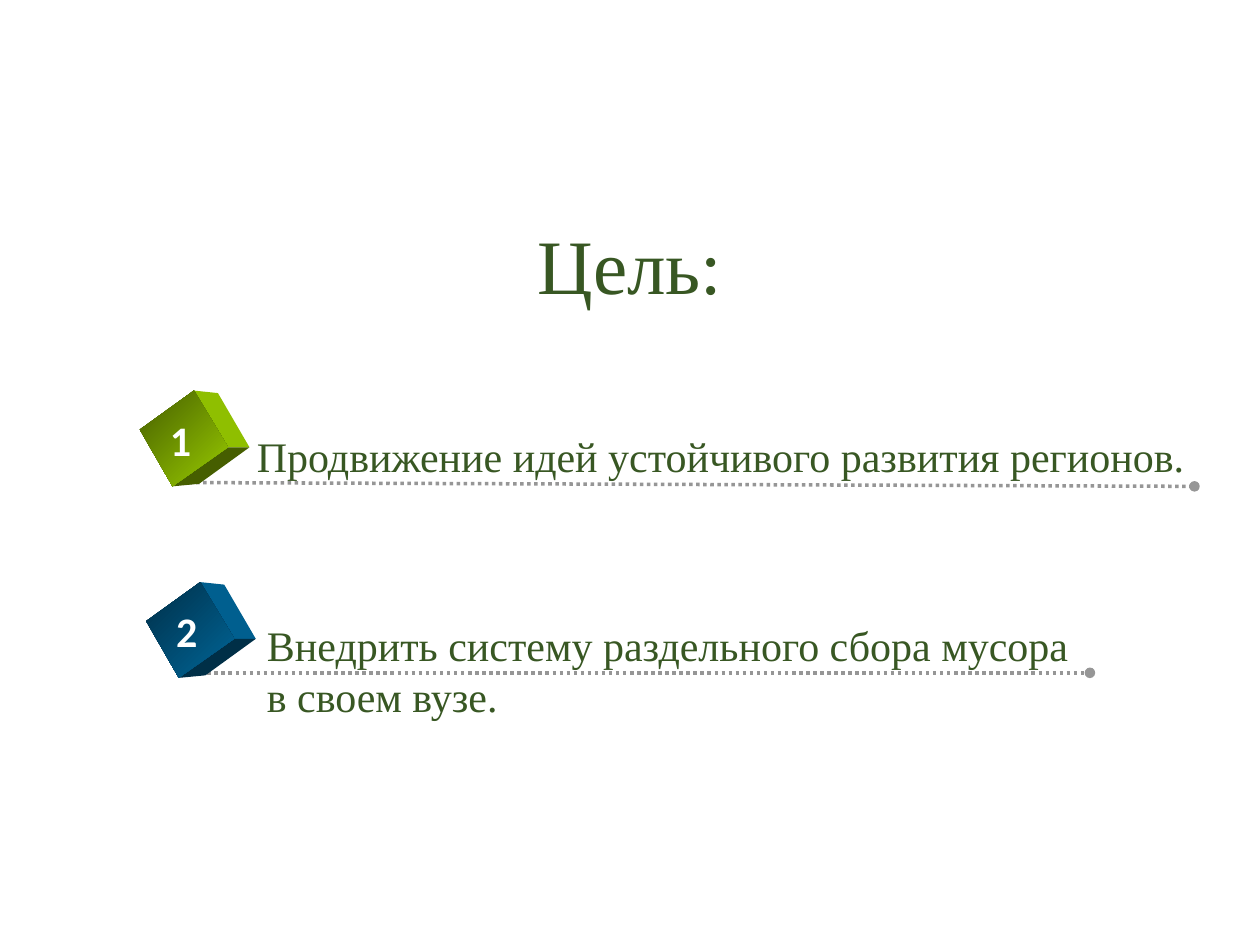
from dataclasses import dataclass

import pptx
import pptx.dml.color
import pptx.enum.dml
import pptx.enum.shapes
import pptx.enum.text
import pptx.util
from lxml import etree
from pptx.oxml.ns import qn
from pptx.util import Inches

SERIF = "Times New Roman"
GREEN = "385723"
WHITE = "FFFFFF"
GREY = "969696"

# Cube corners, relative to the top corner of the cube
TOP, LEFT, BOTTOM, RIGHT = (0.43, 0), (0, 0.31), (0.26, 0.76), (0.7, 0.45)
BACK_TOP, BACK_RIGHT, BACK_BOTTOM = (0.62, 0.02), (0.87, 0.45), (0.47, 0.74)


@dataclass
class Goal:
    number: str
    lines: list[str]
    cube: tuple[float, float]
    text_box: tuple[float, float, float, float]
    rule: tuple[float, float, float, float]
    bright: str
    side: str
    dark: str


GOALS = [
    Goal("1", ["Продвижение идей устойчивого развития регионов."],
         (1.11, 3.1), (1.94, 3.37, 7.66, 0.5), (1.5, 3.83, 9.48, 3.86),
         "99CC00", "8FBF00", "465E00"),
    Goal("2", ["Внедрить систему раздельного сбора мусора", "в своем вузе."],
         (1.16, 4.62), (2.02, 4.87, 6.71, 0.91), (1.59, 5.34, 8.65, 5.34),
         "006699", "005F8F", "002F47"),
]


def rgb(value: str) -> pptx.dml.color.RGBColor:
    return pptx.dml.color.RGBColor.from_string(value)


def add_text(s, box, lines, size, color, font=SERIF, bold=False, wrap=False):
    sp = s.shapes.add_textbox(*map(Inches, box))
    tf = sp.text_frame
    tf.word_wrap = wrap
    tf.text = "\n".join(lines)
    for p in tf.paragraphs:
        for r in p.runs:
            r.font.name = font
            r.font.size = pptx.util.Pt(size)
            r.font.bold = bold
            r.font.color.rgb = rgb(color)
    return tf


def add_rule(s, ends: tuple[float, float, float, float]) -> None:
    """Draw a dotted line that ends in a round dot."""
    line = s.shapes.add_connector(
        pptx.enum.shapes.MSO_CONNECTOR.STRAIGHT, *map(Inches, ends))
    line.line.color.rgb = rgb(GREY)
    line.line.width = pptx.util.Pt(2)
    line.line.dash_style = pptx.enum.dml.MSO_LINE.ROUND_DOT
    ln = line.line._get_or_add_ln()
    etree.SubElement(ln, qn("a:tailEnd"), type="oval")
    etree.SubElement(line._element.spPr, qn("a:effectLst"))


def add_face(s, origin, corners, color):
    x, y = origin
    points = [(Inches(x + dx), Inches(y + dy)) for dx, dy in corners]
    builder = s.shapes.build_freeform(*points[0], scale=1.0)
    builder.add_line_segments(points[1:], close=True)
    sp = builder.convert_to_shape()
    sp.shadow.inherit = False
    sp.line.fill.background()
    sp.fill.solid()
    sp.fill.fore_color.rgb = rgb(color)
    return sp


def add_cube(s, goal: Goal) -> None:
    add_face(s, goal.cube, [TOP, BACK_TOP, BACK_RIGHT, RIGHT], goal.side)
    add_face(s, goal.cube, [BOTTOM, RIGHT, BACK_RIGHT, BACK_BOTTOM], goal.dark)
    front = add_face(s, goal.cube, [TOP, RIGHT, BOTTOM, LEFT], goal.bright)
    front.fill.gradient()
    front.fill.gradient_angle = 315
    for stop, color in zip(front.fill.gradient_stops, (goal.dark, goal.bright)):
        stop.color.rgb = rgb(color)


def add_goal(s, goal: Goal) -> None:
    add_rule(s, goal.rule)
    add_cube(s, goal)
    add_text(s, goal.text_box, goal.lines, 24, GREEN)
    x, y = goal.cube
    add_text(s, (x + 0.14, y + 0.14, 0.39, 0.5), [goal.number], 24, WHITE,
             font="Calibri", bold=True)


def main() -> None:
    prs = pptx.Presentation()
    prs.slide_width, prs.slide_height = Inches(10), Inches(7.5)
    s = prs.slides.add_slide(prs.slide_layouts[6])
    tf = add_text(s, (0, 1.64, 10, 1), ["Цель:"], 44, GREEN, wrap=True)
    tf.vertical_anchor = pptx.enum.text.MSO_ANCHOR.MIDDLE
    p = tf.paragraphs[0]
    p.alignment = pptx.enum.text.PP_ALIGN.CENTER
    p.line_spacing = 0.9
    for goal in GOALS:
        add_goal(s, goal)
    prs.save("out.pptx")


if __name__ == "__main__":
    main()
